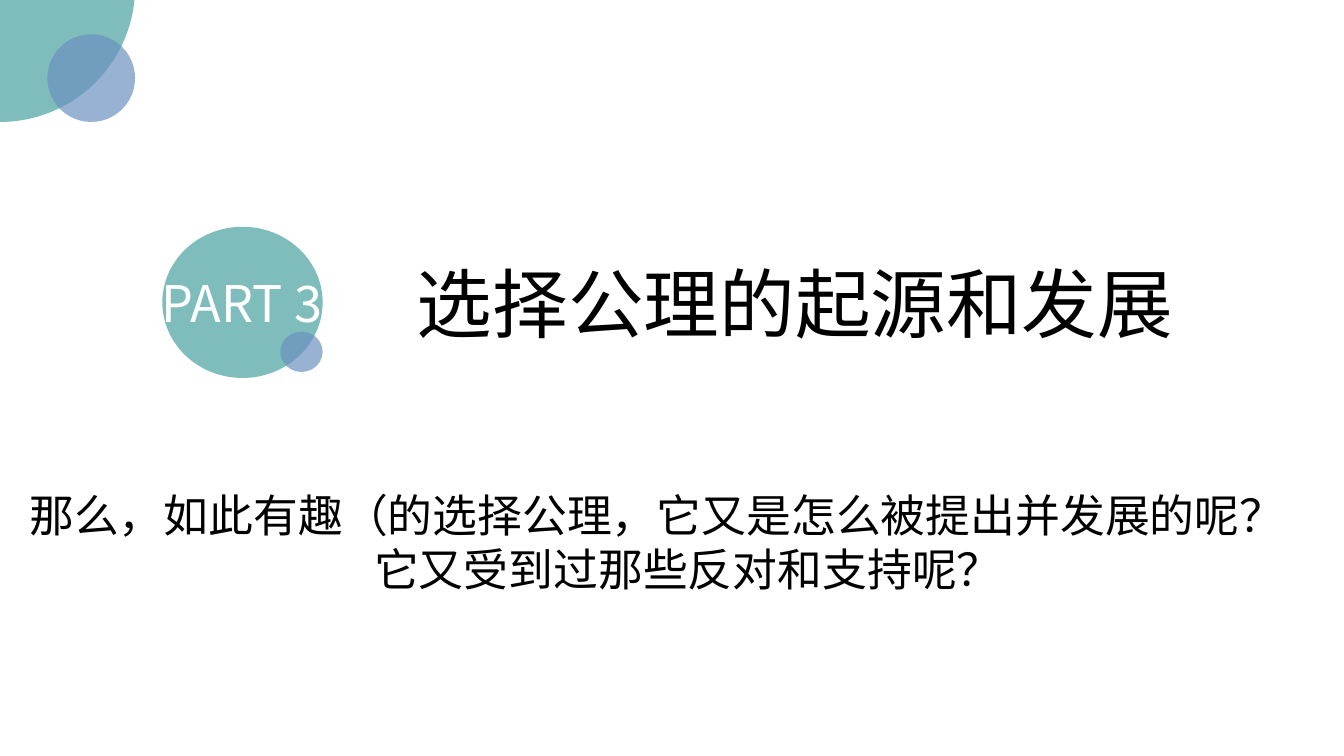
from lxml.etree import SubElement
from pptx import Presentation
from pptx.dml.color import RGBColor
from pptx.enum.shapes import MSO_SHAPE
from pptx.enum.text import MSO_ANCHOR, MSO_AUTO_SIZE, PP_ALIGN
from pptx.oxml.ns import qn
from pptx.util import Inches, Pt

TEAL = RGBColor(0x48, 0xA2, 0xA0)
BLUE = RGBColor(0x6C, 0x92, 0xC0)
BLACK = RGBColor(0, 0, 0)
WHITE = RGBColor(255, 255, 255)
FONT = "Noto Sans CJK SC"


def place(part, left, top, width, height):
    part.left, part.top = Inches(left), Inches(top)
    part.width, part.height = Inches(width), Inches(height)


def add_circle(slide, left, top, width, height, color):
    circle = slide.shapes.add_shape(
        MSO_SHAPE.OVAL, Inches(left), Inches(top), Inches(width), Inches(height))
    circle.shadow.inherit = False
    circle.line.fill.background()
    circle.fill.solid()
    circle.fill.fore_color.rgb = color
    tint = circle.fill._xPr.find(qn("a:solidFill"))[0]
    SubElement(tint, qn("a:alpha")).set("val", "70000")


def write(part, text, size, color, alignments=(PP_ALIGN.CENTER,)):
    frame = part.text_frame
    frame.text = text
    frame.word_wrap = True
    frame.auto_size = MSO_AUTO_SIZE.NONE
    frame.vertical_anchor = MSO_ANCHOR.TOP
    for paragraph, alignment in zip(frame.paragraphs, alignments):
        paragraph.alignment = alignment
        paragraph.line_spacing = 1.0
        paragraph.space_before = Pt(0)
        for run in paragraph.runs:
            run.font.size = Pt(size)
            run.font.color.rgb = color
            run.font.name = FONT
            SubElement(run.font._element, qn("a:ea")).set("typeface", FONT)


def corner_ornament(slide, left, top, size):
    add_circle(slide, left - size, top - size - 0.13, 2 * size, 2 * size, TEAL)
    add_circle(slide, left + 0.47, top + 0.34, 0.87, 0.87, BLUE)


def part_badge(slide, left, top, width, height):
    add_circle(slide, left, top, width, height, TEAL)
    part_number = slide.shapes.add_textbox(
        Inches(left - 1.03), Inches(top + 0.4), Inches(3.64), Inches(0.71))
    write(part_number, "PART 3", 36, WHITE)
    add_circle(slide, left + width - 0.42, top + 1.04, 0.42, 0.4, BLUE)


def section_heading(slide, left, top, width, height):
    heading = slide.shapes.title
    place(heading, left, top, width, height)
    write(heading, "选择公理的起源和发展", 54, BLACK)


def section_questions(slide, left, top, width, height):
    questions = slide.placeholders[1]
    place(questions, left, top, width, height)
    write(questions,
          "那么，如此有趣（的选择公理，它又是怎么被提出并发展的呢？\n"
          "它又受到过那些反对和支持呢？",
          32, BLACK, (PP_ALIGN.LEFT, PP_ALIGN.CENTER))


def main():
    deck = Presentation()
    deck.slide_width, deck.slide_height = Inches(13.33), Inches(7.5)
    slide = deck.slides.add_slide(deck.slide_layouts[0])
    corner_ornament(slide, 0, 0, 1.34)
    section_questions(slide, 0.19, 4.79, 13.27, 1.18)
    section_heading(slide, 3.82, 2.5, 8.13, 1.01)
    part_badge(slide, 1.61, 2.25, 1.59, 1.5)
    deck.save("out.pptx")


if __name__ == "__main__":
    main()
